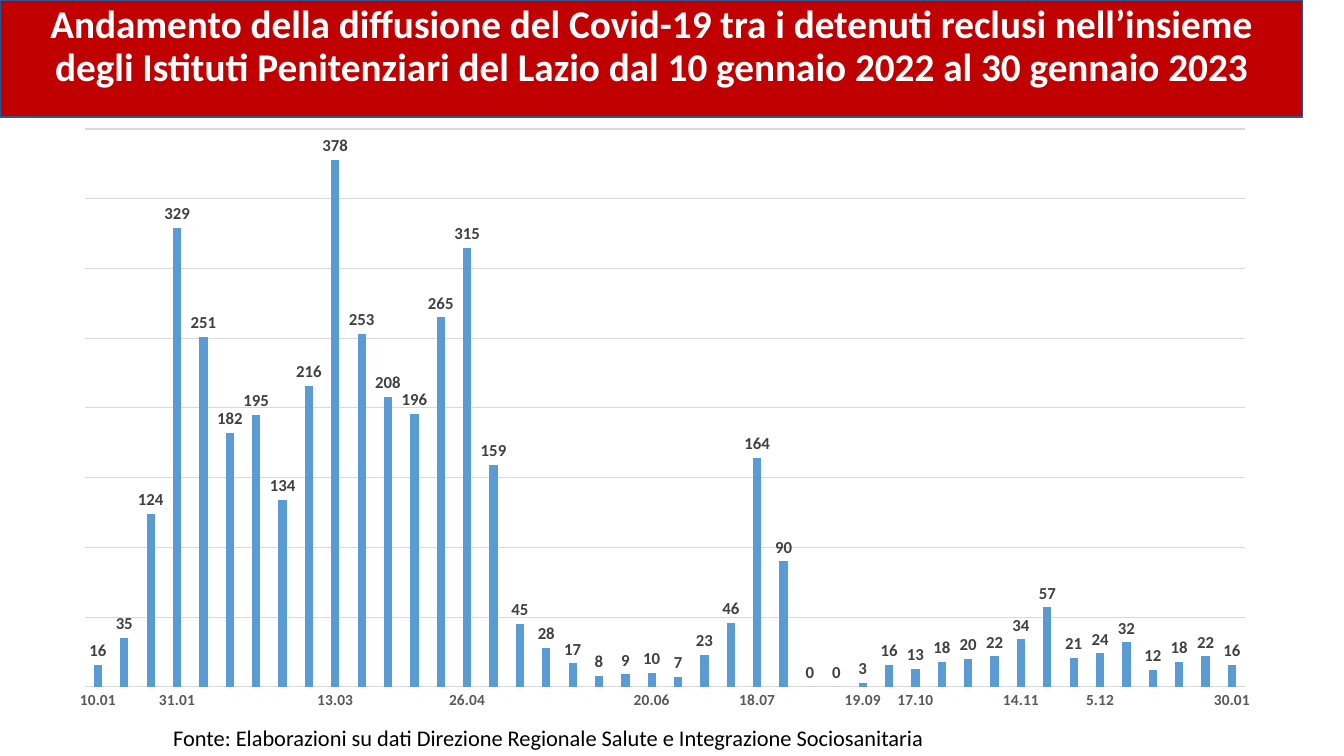
import dataclasses
from typing import Any

import pptx
import pptx.chart.data
import pptx.dml.color
import pptx.enum.chart
import pptx.enum.shapes
import pptx.enum.text
import pptx.oxml
import pptx.util

WIDTH, HEIGHT = 13.33, 7.5
FONT = "Calibri"
VALUES = [
    16, 35, 124, 329, 251, 182, 195, 134, 216, 378, 253,
    208, 196, 265, 315, 159, 45, 28, 17, 8, 9, 10,
    7, 23, 46, 164, 90, 0, 0, 3, 16, 13, 18,
    20, 22, 34, 57, 21, 24, 32, 12, 18, 22, 16,
]
DATES = {
    0: "10.01", 3: "31.01", 9: "13.03", 14: "26.04", 21: "20.06", 25: "18.07",
    29: "19.09", 31: "17.10", 35: "14.11", 38: "5.12", 43: "30.01",
}
PLOT_LAYOUT = {"x": 0.024, "y": 0.02, "w": 0.952, "h": 0.921}


@dataclasses.dataclass(frozen=True)
class Area:
    left: float
    top: float
    width: float
    height: float

    def box(self) -> tuple[int, ...]:
        return tuple(
            pptx.util.Inches(share * side)
            for share, side in zip(dataclasses.astuple(self), (WIDTH, HEIGHT) * 2)
        )


@dataclasses.dataclass(frozen=True)
class Caption:
    area: Area
    text: str
    size: float
    color: str
    bold: bool
    frame: dict[str, Any]
    paragraph: dict[str, Any]
    fill: str = ""
    line: str = ""


CHART_AREA = Area(0.0413, 0.1547, 0.907, 0.8013)
CAPTIONS = [
    Caption(
        Area(0, 0, 0.9692, 0.1547),
        "Andamento della diffusione del Covid-19 tra i detenuti reclusi nell’insieme "
        "degli Istituti Penitenziari del Lazio dal 10 gennaio 2022 al 30 gennaio 2023",
        28, "FFFFFF", True,
        {"word_wrap": True, "vertical_anchor": pptx.enum.text.MSO_ANCHOR.TOP},
        {"alignment": pptx.enum.text.PP_ALIGN.CENTER, "line_spacing": 0.9,
         "space_before": pptx.util.Pt(10)},
        "C00000", "325491",
    ),
    Caption(
        Area(0.1215, 0.9507, 0.5881, 0.0493),
        "Fonte: Elaborazioni su dati Direzione Regionale Salute e Integrazione Sociosanitaria",
        16, "000000", False,
        {"word_wrap": False, "auto_size": pptx.enum.text.MSO_AUTO_SIZE.SHAPE_TO_FIT_TEXT},
        {"alignment": pptx.enum.text.PP_ALIGN.LEFT},
    ),
]


def rgb(color: str) -> pptx.dml.color.RGBColor:
    return pptx.dml.color.RGBColor.from_string(color)


def set_format(target: Any, values: dict[str, Any]) -> None:
    for name, value in values.items():
        setattr(target, name, value)


def set_font(font: Any, size: float, color: str, bold: bool) -> None:
    set_format(font, {"name": FONT, "size": pptx.util.Pt(size), "bold": bold})
    font.color.rgb = rgb(color)


def set_fill(fill: Any, color: str) -> None:
    fill.solid()
    fill.fore_color.rgb = rgb(color)


def set_line(line: Any, color: str, width: float) -> None:
    set_fill(line.fill, color)
    line.width = pptx.util.Pt(width)


def add_caption(s: Any, caption: Caption) -> None:
    if caption.fill:
        sp = s.shapes.add_shape(pptx.enum.shapes.MSO_SHAPE.RECTANGLE, *caption.area.box())
        sp.shadow.inherit = False
        set_fill(sp.fill, caption.fill)
        set_line(sp.line, caption.line, 1)
    else:
        sp = s.shapes.add_textbox(*caption.area.box())
    tf = sp.text_frame
    set_format(tf, caption.frame)
    p = tf.paragraphs[0]
    set_format(p, caption.paragraph)
    r = p.add_run()
    r.text = caption.text
    set_font(r.font, caption.size, caption.color, caption.bold)


def set_plot_layout(chart: Any) -> None:
    ns = "http://schemas.openxmlformats.org/drawingml/2006/chart"
    edges = "".join(f'<c:{key}Mode val="edge"/>' for key in "xy")
    sizes = "".join(f'<c:{key} val="{share}"/>' for key, share in PLOT_LAYOUT.items())
    layout = pptx.oxml.parse_xml(
        f'<c:layout xmlns:c="{ns}"><c:manualLayout><c:layoutTarget val="inner"/>'
        f"{edges}{sizes}</c:manualLayout></c:layout>"
    )
    plot_area = chart.plots[0]._element.getparent()
    for old in plot_area.findall(f"{{{ns}}}layout"):
        plot_area.remove(old)
    plot_area.insert(0, layout)
    skip = pptx.oxml.parse_xml(f'<c:tickLblSkip xmlns:c="{ns}" val="1"/>')
    plot_area.find(f".//{{{ns}}}noMultiLvlLbl").addprevious(skip)


def add_cases_chart(s: Any, area: Area) -> None:
    data = pptx.chart.data.CategoryChartData()
    data.categories = [DATES.get(week, "") for week in range(len(VALUES))]
    data.add_series("Series 1", VALUES)
    kind = pptx.enum.chart.XL_CHART_TYPE.COLUMN_CLUSTERED
    chart = s.shapes.add_chart(kind, *area.box(), data).chart
    set_format(chart, {"has_legend": False, "has_title": False})
    set_font(chart.font, 10, "000000", False)

    plot = chart.plots[0]
    set_format(plot, {"gap_width": 219, "overlap": -27, "vary_by_categories": False,
                      "has_data_labels": True})
    set_fill(plot.series[0].format.fill, "5B9BD5")
    labels = plot.data_labels
    set_format(labels, {"show_value": True,
                        "position": pptx.enum.chart.XL_LABEL_POSITION.OUTSIDE_END})
    set_font(labels.font, 12, "404040", True)

    no_tick = pptx.enum.chart.XL_TICK_MARK.NONE
    dates = chart.category_axis
    set_format(dates, {"major_tick_mark": no_tick, "minor_tick_mark": no_tick})
    set_font(dates.tick_labels.font, 11, "595959", True)
    set_line(dates.format.line, "D9D9D9", 0.75)

    cases = chart.value_axis
    set_format(cases, {"minimum_scale": 0, "maximum_scale": 400, "major_unit": 50,
                       "has_major_gridlines": True, "visible": False})
    set_line(cases.major_gridlines.format.line, "D9D9D9", 0.75)
    set_plot_layout(chart)


def main() -> None:
    prs = pptx.Presentation()
    set_format(prs, {"slide_width": pptx.util.Inches(WIDTH),
                     "slide_height": pptx.util.Inches(HEIGHT)})
    s = prs.slides.add_slide(prs.slide_layouts[6])
    for caption in CAPTIONS:
        add_caption(s, caption)
    add_cases_chart(s, CHART_AREA)
    prs.save("out.pptx")


if __name__ == "__main__":
    main()
